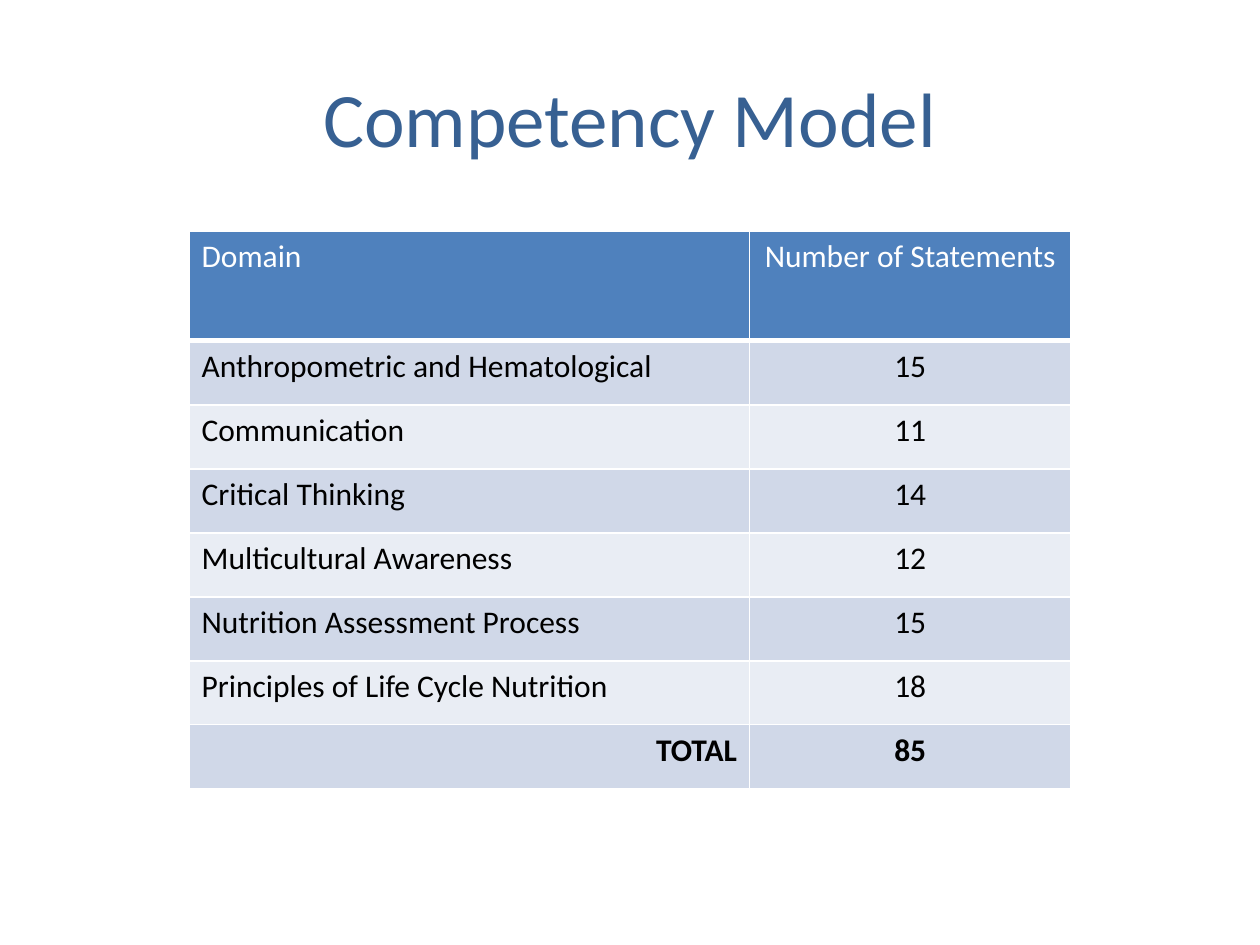
from lxml import etree
from pptx import Presentation
from pptx.dml.color import RGBColor
from pptx.enum.text import MSO_ANCHOR, PP_ALIGN
from pptx.oxml.ns import qn
from pptx.util import Cm, Pt

LEFT, CENTER, RIGHT = PP_ALIGN.LEFT, PP_ALIGN.CENTER, PP_ALIGN.RIGHT
MIDDLE = MSO_ANCHOR.MIDDLE

WHITE = RGBColor(0xFF, 0xFF, 0xFF)
BLACK = RGBColor(0x00, 0x00, 0x00)
TITLE_BLUE = RGBColor(0x37, 0x60, 0x92)
HEADER_BLUE = RGBColor(0x4F, 0x81, 0xBD)
BANDS = (RGBColor(0xD0, 0xD8, 0xE8), RGBColor(0xE9, 0xED, 0xF4))

HEADINGS = ("Domain", "Number of Statements")
DOMAINS = (
    ("Anthropometric and Hematological", 15),
    ("Communication", 11),
    ("Critical Thinking", 14),
    ("Multicultural Awareness", 12),
    ("Nutrition Assessment Process", 15),
    ("Principles of Life Cycle Nutrition", 18),
)


class SlideBuilder:
    font_name = "Calibri"
    title_size = Pt(44)
    table_size = Pt(18)

    def __init__(self, slide):
        self.slide = slide

    def add_text(self, text_frame, text, size, color, alignment, bold=False):
        paragraph = text_frame.paragraphs[0]
        paragraph.alignment = alignment
        run = paragraph.add_run()
        run.text = text
        run.font.name = self.font_name
        run.font.size = size
        run.font.bold = bold
        run.font.color.rgb = color

    def add_title(self, text, left, top, width, height):
        text_frame = self.slide.shapes.add_textbox(left, top, width, height).text_frame
        text_frame.word_wrap = True
        text_frame.vertical_anchor = MIDDLE
        self.add_text(text_frame, text, self.title_size, TITLE_BLUE, CENTER)

    def add_borders(self, cell, bottom_width):
        """Draw white cell edges; call before the fill, which must follow them in the XML."""
        properties = cell._tc.get_or_add_tcPr()
        widths = {"a:lnL": 1, "a:lnR": 1, "a:lnT": 1, "a:lnB": bottom_width}
        for tag, width in widths.items():
            line = etree.SubElement(properties, qn(tag), w=str(Pt(width)))
            fill = etree.SubElement(line, qn("a:solidFill"))
            etree.SubElement(fill, qn("a:srgbClr"), val=str(WHITE))

    def add_row(self, row, texts, fill, color, first_alignment=LEFT, bold=False,
                bottom_width=1):
        for cell, text, alignment in zip(row.cells, texts, (first_alignment, CENTER)):
            self.add_borders(cell, bottom_width)
            cell.fill.solid()
            cell.fill.fore_color.rgb = fill
            self.add_text(cell.text_frame, str(text), self.table_size, color,
                          alignment, bold)

    def add_table(self, left, top, column_widths, header_height, row_height):
        """Add the domain table with a header row and a computed total row."""
        total = ("TOTAL", sum(count for _, count in DOMAINS))
        body = (*DOMAINS, total)
        height = header_height + row_height * len(body)
        table = self.slide.shapes.add_table(
            len(body) + 1, len(HEADINGS), left, top, sum(column_widths), height).table
        for column, width in zip(table.columns, column_widths):
            column.width = width
        header, *rows = table.rows
        header.height = header_height
        self.add_row(header, HEADINGS, HEADER_BLUE, WHITE, bottom_width=3)
        for index, (row, texts) in enumerate(zip(rows, body)):
            row.height = row_height
            is_total = texts is total
            self.add_row(row, texts, BANDS[index % 2], BLACK,
                         RIGHT if is_total else LEFT, is_total)


def main():
    presentation = Presentation()
    presentation.slide_width, presentation.slide_height = Cm(25.4), Cm(19.05)
    builder = SlideBuilder(presentation.slides.add_slide(presentation.slide_layouts[6]))
    builder.add_title("Competency Model", Cm(1.27), Cm(0.76), Cm(22.86), Cm(3.18))
    builder.add_table(Cm(3.81), Cm(4.66), (Cm(11.3), Cm(6.48)), Cm(2.21), Cm(1.29))
    presentation.save("out.pptx")


if __name__ == "__main__":
    main()
